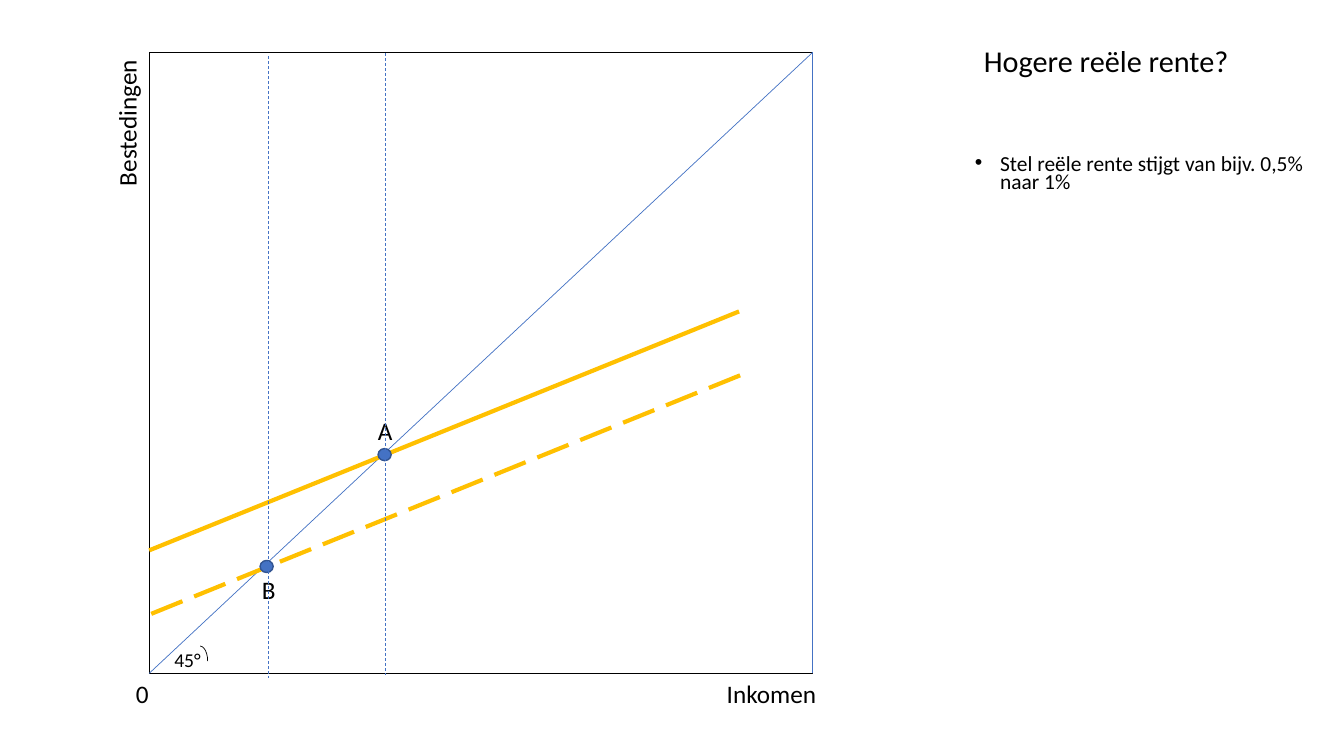
from lxml import etree
from pptx import Presentation
from pptx.dml.color import RGBColor
from pptx.enum.dml import MSO_LINE
from pptx.enum.shapes import MSO_CONNECTOR, MSO_SHAPE
from pptx.enum.text import MSO_ANCHOR
from pptx.oxml.ns import qn
from pptx.util import Inches, Pt

BLACK = RGBColor(0x00, 0x00, 0x00)
BLUE = RGBColor(0x44, 0x72, 0xC4)
DARK_BLUE = RGBColor(0x32, 0x54, 0x91)
GOLD = RGBColor(0xFF, 0xC0, 0x00)

STRAIGHT = MSO_CONNECTOR.STRAIGHT
RECTANGLE = MSO_SHAPE.RECTANGLE
ARC = MSO_SHAPE.ARC
POINT = MSO_SHAPE.FLOWCHART_CONNECTOR
DASH = MSO_LINE.DASH
LONG_DASH = MSO_LINE.LONG_DASH
TOP = MSO_ANCHOR.TOP
MIDDLE = MSO_ANCHOR.MIDDLE

# Frame of the diagram
LEFT, UPPER, RIGHT, LOWER = 1.48, 0.52, 8.06, 6.68


class SlideBuilder:
    font = "Calibri"

    def __init__(self, slide):
        self.slide = slide

    def text(self, words, left, top, width, height, size=18, anchor=TOP,
             rotation=0, line_spacing=None):
        box = self.slide.shapes.add_textbox(
            Inches(left), Inches(top), Inches(width), Inches(height))
        box.rotation = rotation
        frame = box.text_frame
        frame.word_wrap = True
        frame.vertical_anchor = anchor
        paragraph = frame.paragraphs[0]
        if line_spacing:
            paragraph.line_spacing = line_spacing
        run = paragraph.add_run()
        run.text = words
        run.font.name = self.font
        run.font.size = Pt(size)
        run.font.color.rgb = BLACK
        return paragraph

    def bullet(self, words, left, top, width, height, size):
        paragraph = self.text(words, left, top, width, height, size, line_spacing=0.7)
        paragraph.space_before = Pt(10)
        properties = paragraph._p.get_or_add_pPr()
        properties.set("marL", str(Inches(0.25)))
        properties.set("indent", str(Inches(-0.25)))
        etree.SubElement(properties, qn("a:buFont")).set("typeface", "Arial")
        etree.SubElement(properties, qn("a:buChar")).set("char", "•")

    def shape(self, kind, left, top, width, height, line_color, line_width, fill=None):
        shape = self.slide.shapes.add_shape(
            kind, Inches(left), Inches(top), Inches(width), Inches(height))
        shape.shadow.inherit = False
        if fill is None:
            shape.fill.background()
        else:
            shape.fill.solid()
            shape.fill.fore_color.rgb = fill
        shape.line.color.rgb = line_color
        shape.line.width = Pt(line_width)

    def line(self, start_x, start_y, end_x, end_y, color=BLUE, width=0.5, dash=None):
        connector = self.slide.shapes.add_connector(
            STRAIGHT, Inches(start_x), Inches(start_y), Inches(end_x), Inches(end_y))
        connector.line.color.rgb = color
        connector.line.width = Pt(width)
        if dash is not None:
            connector.line.dash_style = dash
        etree.SubElement(connector._element.spPr, qn("a:effectLst"))

    def equilibrium(self, name, left, top, label_left, label_top):
        self.shape(POINT, left, top, 0.13, 0.12, DARK_BLUE, 1, BLUE)
        self.text(name, label_left, label_top, 0.75, 0.4)


def main():
    presentation = Presentation()
    presentation.slide_width = Inches(13.33)
    presentation.slide_height = Inches(7.5)
    builder = SlideBuilder(presentation.slides.add_slide(presentation.slide_layouts[6]))

    # Title and explanation
    builder.text("Hogere reële rente?", 9.66, 0.3, 2.84, 0.65, 21.6, MIDDLE,
                 line_spacing=0.9)
    builder.bullet("Stel reële rente stijgt van bijv. 0,5% naar 1%",
                   9.57, 1.51, 3.52, 0.49, 15.3)

    # Frame and axis labels
    builder.shape(RECTANGLE, LEFT, UPPER, RIGHT - LEFT, LOWER - UPPER, BLACK, 1)
    builder.text("0", 1.25, LOWER, 0.46, 0.4)
    builder.text("Inkomen", 7.11, LOWER, 1.97, 0.4)
    builder.text("Bestedingen", 0.34, 0.83, 1.83, 0.4, rotation=270)

    # 45-degree line and its angle
    builder.line(RIGHT, UPPER, RIGHT, LOWER)
    builder.line(LEFT, LOWER, RIGHT, UPPER)
    builder.text("45°", 1.63, 6.38, 0.62, 0.34, 14)
    builder.shape(ARC, 1.91, 6.41, 0.15, 0.3, BLACK, 0.5)

    # Spending lines before and after the rise, with their equilibria
    builder.line(LEFT, 5.46, 7.33, 3.09, GOLD, 3)
    builder.equilibrium("A", 3.75, 4.45, 3.65, 4.07)
    builder.line(1.5, 6.09, 7.35, 3.72, GOLD, 3, LONG_DASH)
    builder.equilibrium("B", 2.58, 5.56, 2.5, 5.65)

    # Income levels at both equilibria
    for income, top in ((2.66, 0.56), (3.82, 0.53)):
        builder.line(income, top, income, top + 6.17, dash=DASH)

    presentation.save("out.pptx")


if __name__ == "__main__":
    main()
